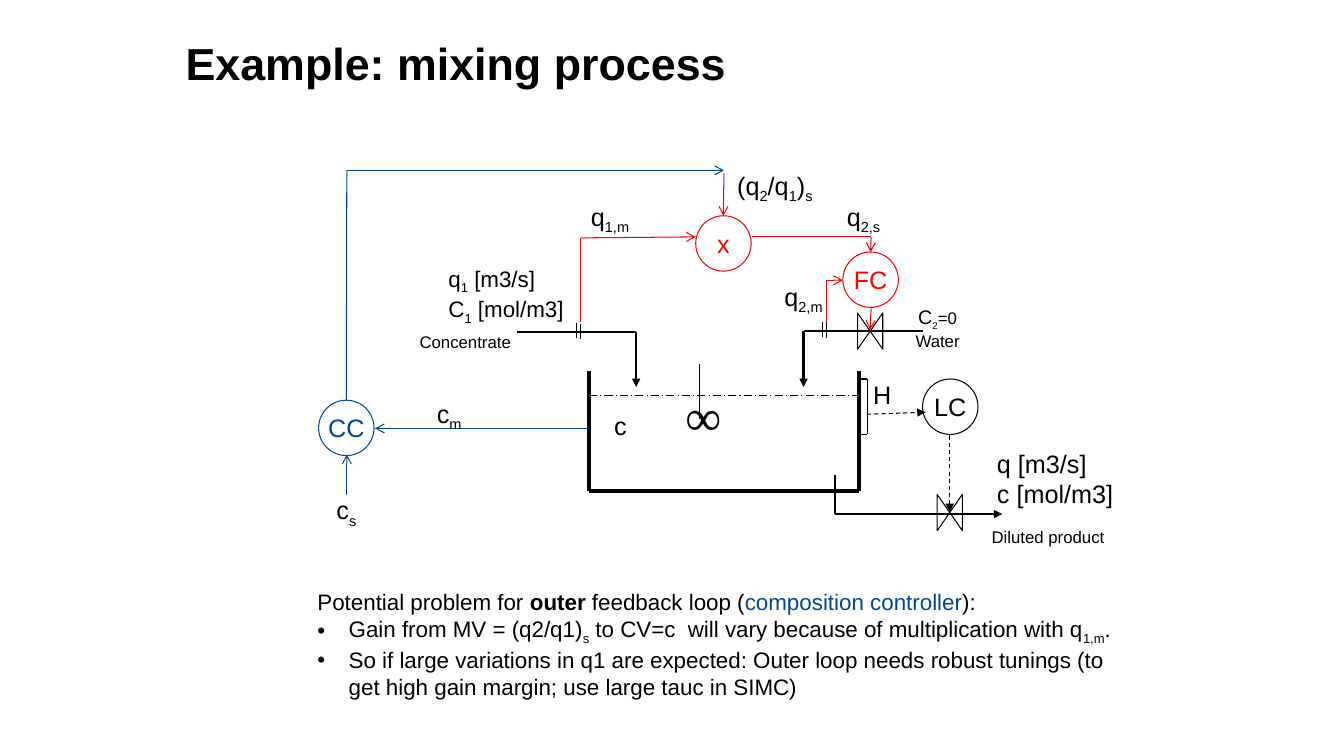
from lxml import etree
from pptx import Presentation
from pptx.dml.color import RGBColor
from pptx.enum.dml import MSO_LINE
from pptx.enum.shapes import MSO_CONNECTOR, MSO_SHAPE
from pptx.enum.text import MSO_ANCHOR, PP_ALIGN
from pptx.oxml.ns import qn
from pptx.util import Inches, Pt

LEFT, CENTER = PP_ALIGN.LEFT, PP_ALIGN.CENTER
MIDDLE = MSO_ANCHOR.MIDDLE
DASH, DASH_DOT = MSO_LINE.DASH, MSO_LINE.LONG_DASH_DOT
BLACK, RED, BLUE, WHITE = "000000", "FF0000", "014693", "FFFFFF"
FONT = "Arial"
DIAMETER = 0.55
VALVE_SIZE = (0.36, 0.25)
TOP_SITE = 0

TITLE = "Example: mixing process"

# name: (left, top, colour)
CONTROLLERS = {
    "LC": (9.15, 3.76, BLACK),
    "FC": (8.36, 2.5, RED),
    "x": (6.9, 2.14, RED),
    "CC": (3.16, 3.97, BLUE),
}
VALVES = [(9.24, 4.96), (8.45, 3.16)]

# points, format; an arrowhead sits at the last point
ROUTES = [
    # tank, level, stirrer and level sensor
    ([(5.84, 3.68), (5.84, 4.87), (8.52, 4.87), (8.52, 3.68)], {"width": 3}),
    ([(5.84, 3.92), (8.52, 3.92)], {"dash": DASH_DOT}),
    ([(6.94, 3.61), (6.94, 4.16)], {}),
    ([(8.52, 3.76), (8.6, 3.76), (8.6, 4.31), (8.52, 4.31)], {}),
    # pipes
    ([(5.13, 3.29), (6.31, 3.29), (6.31, 3.84)], {"width": 1.5, "arrow": "triangle"}),
    ([(9.15, 3.28), (7.97, 3.28), (7.97, 3.84)], {"width": 1.5, "arrow": "triangle"}),
    ([(8.28, 4.71), (8.28, 5.1), (9.94, 5.1)], {"width": 1.5, "arrow": "triangle"}),
    # level loop
    ([(8.6, 4.11), (9.18, 4.09)], {"dash": DASH, "arrow": "triangle"}),
    ([(9.42, 4.32), (9.42, 5.08)], {"dash": DASH, "arrow": "triangle"}),
    # flow ratio control
    ([(8.2, 3.21), (8.2, 2.78), (8.36, 2.78)], {"color": RED, "arrow": "arrow"}),
    ([(8.64, 3.06), (8.63, 3.27)], {"color": RED, "arrow": "arrow"}),
    ([(5.76, 3.19), (5.76, 2.36), (6.9, 2.35)], {"color": RED, "arrow": "arrow"}),
    ([(7.18, 1.72), (7.18, 2.14)], {"color": RED, "arrow": "arrow", "end": "x"}),
    ([(7.46, 2.35), (8.64, 2.35), (8.64, 2.5)],
     {"color": RED, "arrow": "arrow", "end": "FC"}),
    # composition loop
    ([(5.84, 4.25), (3.72, 4.25)], {"color": BLUE, "arrow": "arrow"}),
    ([(3.44, 4.91), (3.44, 4.51)], {"color": BLUE, "arrow": "arrow"}),
    ([(3.44, 3.97), (3.44, 1.69), (7.18, 1.69)],
     {"color": BLUE, "arrow": "arrow", "begin": "CC"}),
]
# flow meters: left, top of the first of two ticks
METERS = [(5.72, 3.2), (8.16, 3.19)]
TICK_GAP, TICK_HEIGHT = 0.04, 0.15

# position, lines (text between ~ signs is subscript), size, alignment, font
LABELS = [
    ((4.06, 3.24, 1.11, 0.3), ["Concentrate"], 12, CENTER, FONT),
    ((4.35, 2.58, 1.37, 0.64), ["q~1~ [m3/s]", "C~1~ [mol/m3]"], 16, LEFT, FONT),
    ((9.79, 4.4, 1.37, 0.71), ["q [m3/s]", "c [mol/m3]"], 18, LEFT, FONT),
    ((5.99, 4.02, 0.33, 0.4), ["c"], 18, CENTER, FONT),
    ((6.7, 3.77, 0.56, 0.7), ["∞"], 36, LEFT, "Times New Roman"),
    ((8.56, 3.71, 0.38, 0.4), ["H"], 18, CENTER, FONT),
    ((9.73, 5.18, 1.33, 0.3), ["Diluted product"], 12, CENTER, FONT),
    ((7.19, 1.64, 0.99, 0.4), ["(q~2~/q~1~)~s~"], 18, CENTER, FONT),
    ((8.28, 1.95, 0.57, 0.4), ["q~2,s~"], 18, CENTER, FONT),
    ((5.74, 1.95, 0.62, 0.4), ["q~1,m~"], 18, CENTER, FONT),
    ((7.66, 2.74, 0.62, 0.4), ["q~2,m~"], 18, CENTER, FONT),
    ((4.22, 3.9, 0.47, 0.4), ["c~m~"], 18, CENTER, FONT),
    ((3.23, 4.86, 0.41, 0.4), ["c~s~"], 18, CENTER, FONT),
    ((8.98, 2.98, 0.64, 0.74),
     [[("C", {"size": 14}), ("2", {"subscript": True}), ("=0", {})], "Water"],
     12, CENTER, FONT),
]

NOTE_BOX = (3.05, 5.79, 8.28, 1.18)
NOTE = [
    [("Potential problem for ", {}), ("outer", {"bold": True}),
     (" feedback loop (", {}), ("composition controller", {"color": BLUE}), ("):", {})],
    "Gain from MV = (q2/q1)~s~ to CV=c  will vary because of multiplication with q~1,m~.",
    "So if large variations in q1 are expected: Outer loop needs robust tunings "
    "(to get high gain margin; use large tauc in SIMC)",
]
BULLET_INDENT = 0.31


def rgb(color):
    return RGBColor.from_string(color)


def inches(values):
    return [Inches(value) for value in values]


def write(paragraph, content, size, color=BLACK, font_name=FONT):
    """Add runs from a marked-up string or from (text, format) pairs."""
    if isinstance(content, str):
        content = [(text, {"subscript": index % 2 == 1})
                   for index, text in enumerate(content.split("~")) if text]
    for text, style in content:
        run = paragraph.add_run()
        run.text = text
        values = {"name": font_name, "size": Pt(style.get("size", size)),
                  "bold": style.get("bold", False)}
        for name, value in values.items():
            setattr(run.font, name, value)
        run.font.color.rgb = rgb(style.get("color", color))
        if style.get("subscript"):
            run.font._element.set("baseline", "-25000")


def add_text(slide, box, lines, size, align=LEFT, font_name=FONT, wrap=False):
    frame = slide.shapes.add_textbox(*inches(box)).text_frame
    frame.word_wrap = wrap
    for index, line in enumerate(lines):
        paragraph = frame.paragraphs[0] if index == 0 else frame.add_paragraph()
        paragraph.alignment = align
        write(paragraph, line, size, font_name=font_name)
    return frame


def add_bullet(paragraph):
    properties = paragraph._p.get_or_add_pPr()
    properties.set("marL", str(Inches(BULLET_INDENT)))
    properties.set("indent", str(-Inches(BULLET_INDENT)))
    etree.SubElement(properties, qn("a:buFont")).set("typeface", FONT)
    etree.SubElement(properties, qn("a:buChar")).set("char", "•")


def add_outline(slide, kind, box, color):
    shape = slide.shapes.add_shape(kind, *inches(box))
    shape.shadow.inherit = False
    shape.line.color.rgb = rgb(color)
    shape.line.width = Pt(0.75)
    return shape


def add_controller(slide, name, left, top, color):
    circle = add_outline(slide, MSO_SHAPE.OVAL, (left, top, DIAMETER, DIAMETER), color)
    circle.fill.solid()
    circle.fill.fore_color.rgb = rgb(WHITE)
    frame = circle.text_frame
    frame.word_wrap = False
    frame.vertical_anchor = MIDDLE
    frame.paragraphs[0].alignment = CENTER
    write(frame.paragraphs[0], name, 18, color)
    return circle


def add_route(slide, points, controllers, color=BLACK, width=0.75, dash=None,
              arrow=None, begin=None, end=None):
    """Draw straight connectors through the points."""
    segments = []
    for start, stop in zip(points, points[1:]):
        segment = slide.shapes.add_connector(MSO_CONNECTOR.STRAIGHT, *inches(start + stop))
        segment.line.color.rgb = rgb(color)
        segment.line.width = Pt(width)
        if dash:
            segment.line.dash_style = dash
        etree.SubElement(segment._element.spPr, qn("a:effectLst"))
        segments.append(segment)
    if begin:
        segments[0].begin_connect(controllers[begin], TOP_SITE)
    if end:
        segments[-1].end_connect(controllers[end], TOP_SITE)
    if arrow:
        line = segments[-1].line._get_or_add_ln()
        etree.SubElement(line, qn("a:tailEnd")).set("type", arrow)


def main():
    presentation = Presentation()
    presentation.slide_width, presentation.slide_height = inches((13.33, 7.5))
    slide = presentation.slides.add_slide(presentation.slide_layouts[5])

    title = slide.shapes.title
    title.left, title.top, title.width, title.height = inches((1.74, 0.3, 10.8, 0.64))
    title.text_frame.vertical_anchor = MIDDLE
    title.text_frame.paragraphs[0].alignment = LEFT
    write(title.text_frame.paragraphs[0], [(TITLE, {"bold": True})], 32)

    for position in VALVES:
        valve = add_outline(slide, MSO_SHAPE.FLOWCHART_COLLATE, position + VALVE_SIZE, BLACK)
        valve.fill.background()
        valve.rotation = 90
    controllers = {name: add_controller(slide, name, *values)
                   for name, values in CONTROLLERS.items()}
    for points, style in ROUTES:
        add_route(slide, points, controllers, **style)
    for left, top in METERS:
        for x, y in ((left, top), (left + TICK_GAP, top + 0.01)):
            add_route(slide, [(x, y), (x, y + TICK_HEIGHT)], controllers)

    for label in LABELS:
        add_text(slide, *label)
    note = add_text(slide, NOTE_BOX, NOTE, 16, wrap=True)
    for paragraph in note.paragraphs[1:]:
        add_bullet(paragraph)
    presentation.save("out.pptx")


if __name__ == "__main__":
    main()
